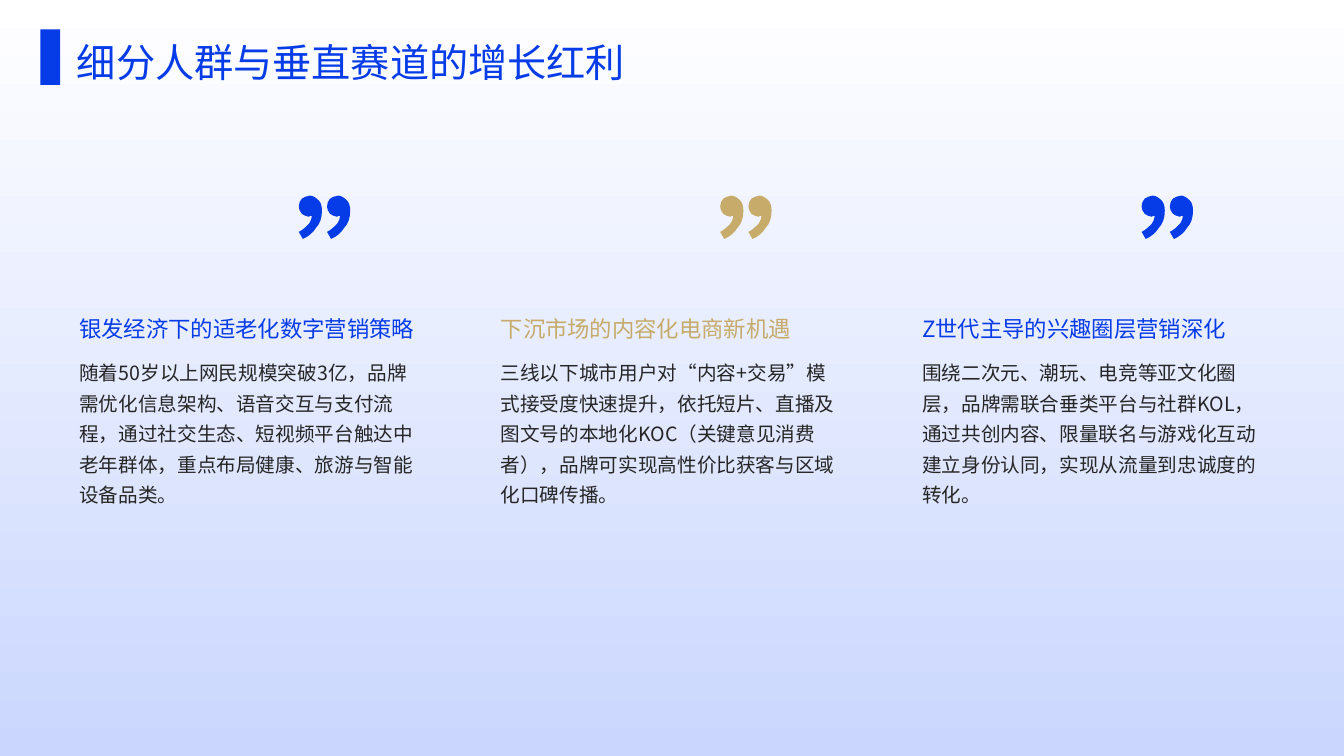
import pptx
import pptx.dml.color
import pptx.enum.shapes
import pptx.enum.text
import pptx.oxml.ns
import pptx.util

Cm = pptx.util.Cm
Pt = pptx.util.Pt
ALIGN = pptx.enum.text.PP_ALIGN
ANCHOR = pptx.enum.text.MSO_ANCHOR
RECTANGLE = pptx.enum.shapes.MSO_SHAPE.RECTANGLE
qn = pptx.oxml.ns.qn

FONT = "Noto Sans CJK SC"
BLUE, GOLD, INK = "063CE8", "C6AB6A", "262626"

SEGMENTS = [
    ("银发经济下的适老化数字营销策略", BLUE,
     "随着50岁以上网民规模突破3亿，品牌需优化信息架构、语音交互与支付流程，"
     "通过社交生态、短视频平台触达中老年群体，重点布局健康、旅游与智能设备品类。"),
    ("下沉市场的内容化电商新机遇", GOLD,
     "三线以下城市用户对“内容+交易”模式接受度快速提升，依托短片、直播及"
     "图文号的本地化KOC（关键意见消费者），品牌可实现高性价比获客与区域化口碑传播。"),
    ("Z世代主导的兴趣圈层营销深化", BLUE,
     "围绕二次元、潮玩、电竞等亚文化圈层，品牌需联合垂类平台与社群KOL，"
     "通过共创内容、限量联名与游戏化互动建立身份认同，实现从流量到忠诚度的转化。"),
]

# Outline of one comma in hundredths of an inch: Bezier curves and one straight edge
COMMA_START = (11, 0)
COMMA = [
    [(14, 0), (17, 2), (20, 5)], [(22, 7), (23, 11), (23, 15)],
    [(23, 22), (21, 28), (17, 32)], [(14, 37), (9, 41), (4, 43)],
    [(0, 36)],
    [(4, 34), (7, 31), (10, 28)], [(12, 25), (13, 22), (13, 20)],
    [(12, 20), (12, 20), (12, 20)], [(11, 20), (10, 21), (10, 21)],
    [(7, 20), (5, 20), (3, 18)], [(1, 16), (0, 13), (0, 11)],
    [(0, 8), (1, 5), (3, 3)], [(5, 2), (8, 0), (11, 0)],
]
COMMA_SHIFTS = (0, 28)


def color(hex_code):
    return pptx.dml.color.RGBColor.from_string(hex_code)


def set_all(target, values):
    for name, value in values.items():
        setattr(target, name, value)


def fill_plain(shape, hex_code):
    shape.shadow.inherit = False
    shape.fill.solid()
    shape.fill.fore_color.rgb = color(hex_code)
    shape.line.fill.background()


def write(shape, text, size, hex_code, spacing, anchor):
    frame = shape.text_frame
    set_all(frame, {"word_wrap": True, "vertical_anchor": anchor,
                    "auto_size": pptx.enum.text.MSO_AUTO_SIZE.NONE,
                    "margin_left": 0, "margin_right": 0,
                    "margin_top": 0, "margin_bottom": 0})
    paragraph = frame.paragraphs[0]
    set_all(paragraph, {"alignment": ALIGN.LEFT, "line_spacing": spacing,
                        "space_before": Pt(0)})
    # Keep punctuation inside the text width
    paragraph._p.get_or_add_pPr().set("hangingPunct", "0")
    run = paragraph.add_run()
    run.text = text
    set_all(run.font, {"size": Pt(size), "name": FONT})
    run.font.color.rgb = color(hex_code)
    east_asian = run.font._element.makeelement(qn("a:ea"), {"typeface": FONT})
    run.font._element.append(east_asian)


def local(point, shift):
    """A comma point in thousandths of a centimetre."""
    return round((point[0] + shift) * 25.4), round(point[1] * 25.4)


def add_quote_mark(slide, left, top, hex_code):
    builder = slide.shapes.build_freeform(
        *local(COMMA_START, 0), scale=Cm(0.001))
    for shift in COMMA_SHIFTS:
        if shift:
            builder.move_to(*local(COMMA_START, shift))
        builder.add_line_segments([local(edge[-1], shift) for edge in COMMA])
    mark = builder.convert_to_shape(left, top)
    # Bend the straight edges into curves
    edges = [(edge, shift) for shift in COMMA_SHIFTS for edge in COMMA]
    lines = list(mark._element.iter(qn("a:lnTo")))
    for line, (edge, shift) in zip(lines, edges):
        if len(edge) == 3:
            curve = line.makeelement(qn("a:cubicBezTo"), {})
            for point in edge:
                x, y = local(point, shift)
                curve.append(line.makeelement(
                    qn("a:pt"), {"x": str(x), "y": str(y)}))
            line.getparent().replace(line, curve)
    fill_plain(mark, hex_code)


def add_header(slide, left, top, width, height):
    # Title
    title = slide.shapes.title
    set_all(title, {"left": left + Cm(0.92), "top": top + Cm(0.1),
                    "width": width - Cm(0.92), "height": height - Cm(0.2)})
    write(title, "细分人群与垂直赛道的增长红利", 28, BLUE, 1.2, ANCHOR.MIDDLE)
    # Accent bar
    bar = slide.shapes.add_shape(RECTANGLE, left, top, Cm(0.5), height)
    fill_plain(bar, BLUE)


def add_segment(slide, left, top, width, height, segment):
    heading, accent, body = segment
    add_quote_mark(slide, left + Cm(5.53), top, accent)
    # Text under its heading
    body_top = Cm(3.99)
    body_box = slide.shapes.add_textbox(left, top + body_top, width,
                                        height - body_top)
    write(body_box, body, 14, INK, 1.3, ANCHOR.TOP)
    heading_box = slide.shapes.add_textbox(left, top + Cm(1.65), width, Cm(2.03))
    write(heading_box, heading, 16, accent, 1.2, ANCHOR.BOTTOM)


def add_backdrop(slide, left, top, width, height):
    backdrop = slide.shapes.add_shape(RECTANGLE, left, top, width, height)
    backdrop.shadow.inherit = False
    backdrop.line.fill.background()
    backdrop.fill.gradient()
    backdrop.fill.gradient_angle = 270
    for stop, hex_code in zip(backdrop.fill.gradient_stops,
                              ("FFFFFF", "CAD6FE")):
        stop.color.rgb = color(hex_code)
    # Behind the title
    slide.shapes.title._element.addprevious(backdrop._element)


def main():
    deck = pptx.Presentation()
    set_all(deck, {"slide_width": Cm(33.87), "slide_height": Cm(19.05)})
    slide = deck.slides.add_slide(deck.slide_layouts.get_by_name("Title Only"))
    add_backdrop(slide, 0, 0, deck.slide_width, deck.slide_height)
    for column, segment in enumerate(SEGMENTS):
        add_segment(slide, Cm(2 + 10.62 * column), Cm(4.93),
                    Cm(8.61), Cm(10.87), segment)
    add_header(slide, Cm(1.02), Cm(0.74), Cm(30.48), Cm(1.4))
    deck.save("out.pptx")


if __name__ == "__main__":
    main()
